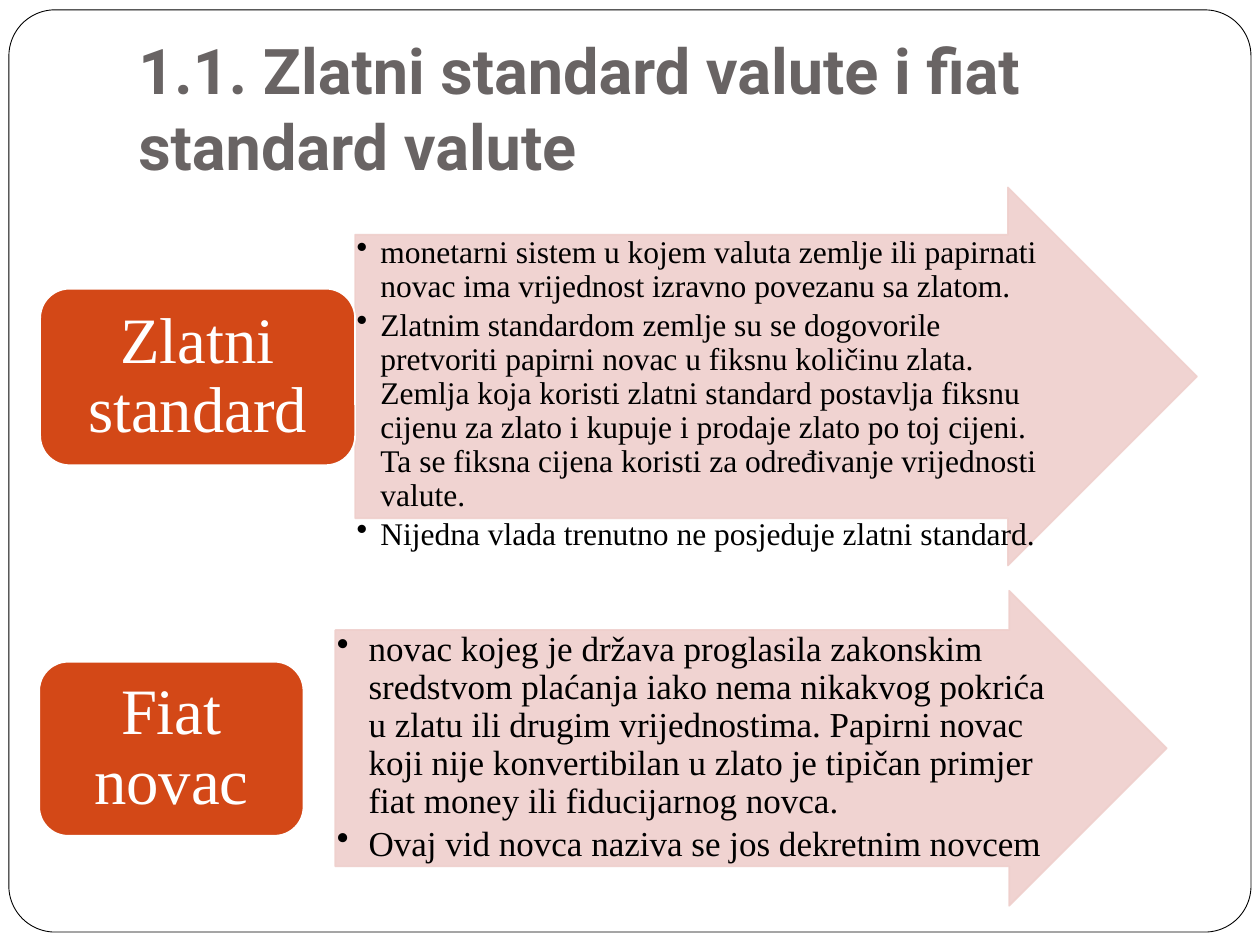
from dataclasses import dataclass
from lxml.etree import SubElement
from pptx import Presentation
from pptx.dml.color import RGBColor
from pptx.enum.shapes import MSO_SHAPE
from pptx.enum.text import MSO_ANCHOR, PP_ALIGN
from pptx.oxml.ns import qn
from pptx.util import Cm, Pt


@dataclass(frozen=True)
class Theme:
    white: str = "FFFFFF"
    black: str = "000000"
    gray: str = "696464"
    pink: str = "EFCFCC"
    rust: str = "D34817"
    head: str = "Roboto"
    body: str = "Times New Roman"
    title: int = 36
    label: int = 37


look = Theme()


def draw(kind, box, fill, edge, width):
    shape = slide.shapes.add_shape(kind, *[Cm(v) for v in box])
    shape.shadow.inherit = False
    shape.fill.solid()
    shape.fill.fore_color.rgb = RGBColor.from_string(fill)
    shape.line.color.rgb = RGBColor.from_string(edge)
    shape.line.width = Pt(width)
    return shape


def write(para, text, face, size, color, bold=False):
    run = para.add_run()
    run.text = text
    run.font.name = face
    run.font.size = Pt(size)
    run.font.bold = bold
    run.font.color.rgb = RGBColor.from_string(color)


deck = Presentation()
deck.slide_width, deck.slide_height = Cm(25.4), Cm(19.05)
slide = deck.slides.add_slide(deck.slide_layouts[6])

# Page frame
frame = draw(MSO_SHAPE.ROUNDED_RECTANGLE, (0.18, 0.2, 25.04, 18.59),
             look.white, look.black, 0.5)
frame.adjustments[0] = 0.05

# Title
title = slide.shapes.add_textbox(Cm(2.54), Cm(0.76), Cm(21.59), Cm(3.18))
body = title.text_frame
body.word_wrap = True
body.vertical_anchor = MSO_ANCHOR.BOTTOM
body.margin_bottom = Cm(0.25)
write(body.paragraphs[0], "1.1. Zlatni standard valute i fiat standard valute",
      look.head, look.title, look.gray, True)

# Each row: label, label box, arrow box, type size, indent, points
rows = [
    ("Zlatni standard", (0.81, 5.82, 6.35, 3.56), (7.16, 3.78, 16.97, 7.62), 18, 0.48, [
        "monetarni sistem u kojem valuta zemlje ili papirnati novac ima "
        "vrijednost izravno povezanu sa zlatom.",
        "Zlatnim standardom zemlje su se dogovorile pretvoriti papirni novac "
        "u fiksnu količinu zlata. Zemlja koja koristi zlatni standard postavlja "
        "fiksnu cijenu za zlato i kupuje i prodaje zlato po toj cijeni. Ta se "
        "fiksna cijena koristi za određivanje vrijednosti valute.",
        "Nijedna vlada trenutno ne posjeduje zlatni standard."]),
    ("Fiat novac", (0.79, 13.34, 5.33, 3.51), (6.76, 11.91, 16.76, 6.35), 20, 0.64, [
        "novac kojeg je država proglasila zakonskim sredstvom plaćanja iako "
        "nema nikakvog pokrića u zlatu ili drugim vrijednostima. Papirni novac "
        "koji nije konvertibilan u zlato je tipičan primjer fiat money ili "
        "fiducijarnog novca.",
        "Ovaj vid novca naziva se jos dekretnim novcem"]),
]

for label, spot, zone, size, dent, points in rows:
    # Arrow with its bullet points
    arrow = draw(MSO_SHAPE.RIGHT_ARROW, zone, look.pink, look.pink, 1)
    arrow.adjustments[0] = 0.75
    for tint in arrow.element.spPr.iter(qn("a:srgbClr")):
        SubElement(tint, qn("a:alpha"), val="90000")
    body = arrow.text_frame
    body.word_wrap = True
    body.vertical_anchor = MSO_ANCHOR.TOP
    body.margin_left = body.margin_right = Cm(0.03)
    body.margin_top = body.margin_bottom = Cm(0.03)
    for n, point in enumerate(points):
        para = body.add_paragraph() if n else body.paragraphs[0]
        para.alignment = PP_ALIGN.LEFT
        para.line_spacing = 0.9
        para.space_after = Pt(0.15 * size)
        props = para._p.get_or_add_pPr()
        props.set("marL", str(Cm(dent)))
        props.set("indent", str(-Cm(dent)))
        SubElement(props, qn("a:buChar"), char="•")
        write(para, point, look.body, size, look.black)

    # Label
    pill = draw(MSO_SHAPE.ROUNDED_RECTANGLE, spot, look.rust, look.white, 1)
    body = pill.text_frame
    body.word_wrap = True
    body.vertical_anchor = MSO_ANCHOR.MIDDLE
    body.margin_left = body.margin_right = Cm(0.38)
    body.margin_top = body.margin_bottom = Cm(0.2)
    para = body.paragraphs[0]
    para.alignment = PP_ALIGN.CENTER
    para.line_spacing = 0.9
    write(para, label, look.body, look.label, look.white)

deck.save("out.pptx")
